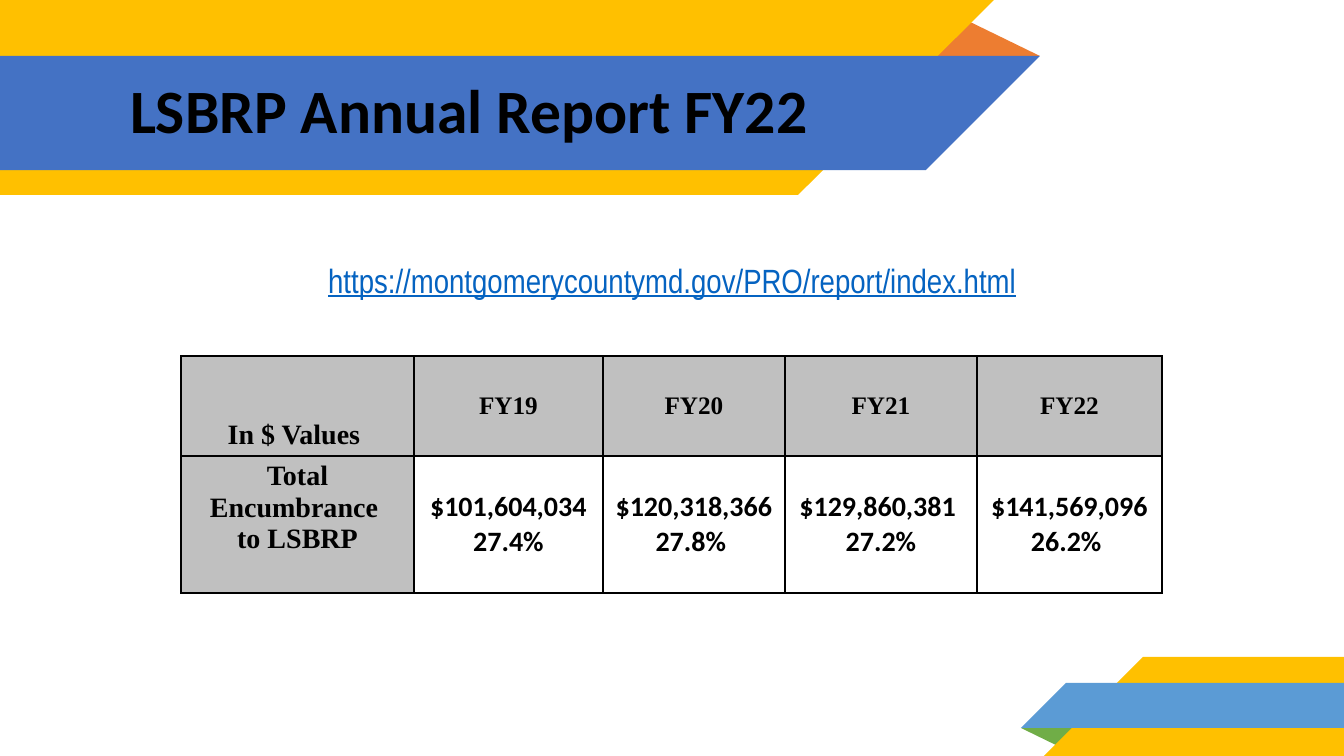
import pptx
import pptx.dml.color
import pptx.enum.text
import pptx.oxml
import pptx.oxml.ns
import pptx.util

RGB = pptx.dml.color.RGBColor
ALIGN = pptx.enum.text.PP_ALIGN
ANCHOR = pptx.enum.text.MSO_ANCHOR

GOLD = RGB(0xFF, 0xC0, 0x00)
BLUE = RGB(0x44, 0x72, 0xC4)
SKY = RGB(0x5B, 0x9B, 0xD5)
GREEN = RGB(0x70, 0xAD, 0x47)
ORANGE = RGB(0xED, 0x7D, 0x31)
GREY = RGB(0xC0, 0xC0, 0xC0)
WHITE = RGB(0xFF, 0xFF, 0xFF)
BLACK = RGB(0x00, 0x00, 0x00)
LINK_BLUE = RGB(0x05, 0x63, 0xC1)

SERIF, SANS, NARROW = "Times New Roman", "Calibri", "Arial Narrow"

# Content
TITLE = "LSBRP Annual Report FY22"
REPORT_URL = "https://montgomerycountymd.gov/PRO/report/index.html"
YEARS = ["FY19", "FY20", "FY21", "FY22"]
CORNER = "In $ Values\u00a0".replace("\u00a0", " ")
ROW_LABEL = ["Total Encumbrance ", "to LSBRP"]
ENCUMBRANCE = [
    ["$101,604,034", "27.4%"],
    ["$120,318,366", "27.8% "],
    ["$129,860,381 ", "27.2%"],
    ["$141,569,096", "26.2% "],
]

# Ribbon outlines in px, back to front
RIBBONS = [
    (GREEN, [(1021, 728), (1079, 728), (1060, 747)]),
    (GOLD, [(1143, 657), (1344, 657), (1344, 756), (1044, 756)]),
    (SKY, [(1066, 683), (1344, 683), (1344, 728), (1021, 728)]),
    (ORANGE, [(962, 18), (1040, 56), (925, 56)]),
    (GOLD, [(0, 0), (994, 0), (798, 195), (0, 195)]),
    (BLUE, [(0, 56), (1040, 56), (926, 170), (0, 170)]),
]
COLUMN_WIDTHS = [233, 189, 182, 192, 185]
ROW_HEIGHTS = [100, 137]

EMU_PER_PX = 914400 / 100.8


def px(length):
    return pptx.util.Emu(round(length * EMU_PER_PX))


def write(frame, lines, font, size, color=BLACK, bold=True, align=ALIGN.CENTER):
    frame.word_wrap = True
    for index, line in enumerate(lines):
        paragraph = frame.add_paragraph() if index else frame.paragraphs[0]
        paragraph.alignment = align
        run = paragraph.add_run()
        run.text = line
        run.font.name = font
        run.font.size = pptx.util.Pt(size)
        run.font.bold = bold
        run.font.color.rgb = color
    return frame.paragraphs[0]


def add_box(left, top, width, height, margins):
    frame = slide.shapes.add_textbox(px(left), px(top), px(width), px(height)).text_frame
    frame.margin_left = frame.margin_right = px(10)
    frame.margin_top = frame.margin_bottom = px(margins)
    frame.vertical_anchor = ANCHOR.MIDDLE
    return frame


def add_borders(cell):
    properties = cell._tc.get_or_add_tcPr()
    for side in ("lnL", "lnR", "lnT", "lnB"):
        properties.append(pptx.oxml.parse_xml(
            f'<a:{side} {pptx.oxml.ns.nsdecls("a")} w="12700"><a:solidFill>'
            f'<a:srgbClr val="{BLACK}"/></a:solidFill></a:{side}>'))


def fill_cell(cell, lines, font, size, fill, anchor):
    add_borders(cell)
    cell.fill.solid()
    cell.fill.fore_color.rgb = fill
    cell.margin_left = cell.margin_right = px(10)
    cell.margin_top = cell.margin_bottom = px(5)
    cell.vertical_anchor = anchor
    write(cell.text_frame, lines, font, size)


deck = pptx.Presentation()
deck.slide_width, deck.slide_height = px(1344), px(756)
slide = deck.slides.add_slide(deck.slide_layouts[6])

# Corner ribbons
for color, (start, *corners) in RIBBONS:
    outline = slide.shapes.build_freeform(*start, scale=EMU_PER_PX)
    outline.add_line_segments(corners, close=True)
    ribbon = outline.convert_to_shape()
    ribbon.shadow.inherit = False
    ribbon.fill.solid()
    ribbon.fill.fore_color.rgb = color
    ribbon.line.fill.background()

# Title and report address
heading = write(add_box(120, 57, 807, 113, 10), [TITLE], SANS, 44, align=ALIGN.LEFT)
heading.line_spacing = 0.9
address = write(add_box(168, 255, 1008, 50, 5), [REPORT_URL], NARROW, 24, LINK_BLUE, False)
address.runs[0].font.underline = True

# Encumbrance table
table = slide.shapes.add_table(
    len(ROW_HEIGHTS), len(COLUMN_WIDTHS), px(181), px(356),
    px(sum(COLUMN_WIDTHS)), px(sum(ROW_HEIGHTS))).table
table.first_row = table.horz_banding = False
for column, width in zip(table.columns, COLUMN_WIDTHS):
    column.width = px(width)
for row, height in zip(table.rows, ROW_HEIGHTS):
    row.height = px(height)

fill_cell(table.cell(0, 0), [CORNER], SERIF, 20, GREY, ANCHOR.BOTTOM)
fill_cell(table.cell(1, 0), ROW_LABEL, SERIF, 20, GREY, ANCHOR.TOP)
for number, (year, amounts) in enumerate(zip(YEARS, ENCUMBRANCE), start=1):
    fill_cell(table.cell(0, number), [year], SERIF, 18, GREY, ANCHOR.MIDDLE)
    fill_cell(table.cell(1, number), amounts, SANS, 20, WHITE, ANCHOR.MIDDLE)

deck.save("out.pptx")
